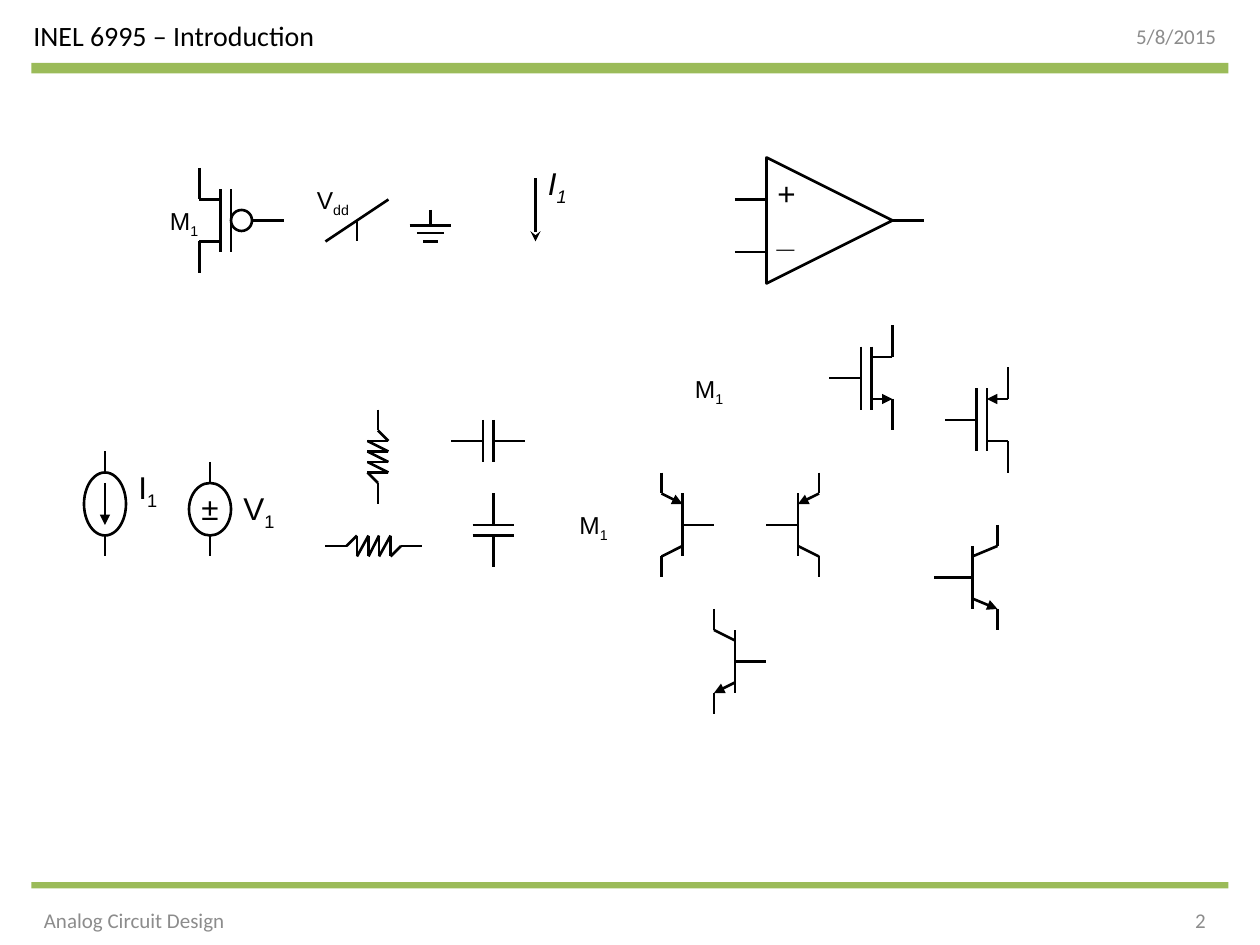
from dataclasses import dataclass, field
from itertools import pairwise
from typing import NamedTuple

from lxml.etree import SubElement
from pptx import Presentation
from pptx.dml.color import RGBColor
from pptx.enum.shapes import MSO_CONNECTOR, MSO_SHAPE
from pptx.enum.text import MSO_ANCHOR, MSO_AUTO_SIZE, PP_ALIGN
from pptx.oxml.ns import qn
from pptx.util import Emu, Pt

EMU_PER_PX = 7620  # 120 px to the inch, so the drawing grid is 10 px
COLORS = {"ink": "000000", "muted": "8C8C8C", "bar": "9BBB59"}


class Box(NamedTuple):
    left: int
    top: int
    width: int
    height: int


class Wire(NamedTuple):
    x1: int
    y1: int
    x2: int
    y2: int
    arrow: str = ""


class Label(NamedTuple):
    box: Box
    text: str
    subscript: str = ""
    size: int = 18
    italic: bool = False


class Caption(NamedTuple):
    box: Box
    text: str
    size: int
    color: str
    align: PP_ALIGN


@dataclass
class Symbol:
    wires: list[Wire]
    circles: list[Box] = field(default_factory=list)
    triangles: list[Box] = field(default_factory=list)
    labels: list[Label] = field(default_factory=list)


def px(*lengths: float) -> list[Emu]:
    return [Emu(round(length * EMU_PER_PX)) for length in lengths]


def rgb(name: str) -> RGBColor:
    return RGBColor.from_string(COLORS[name])


# Drawing
def draw_wire(shapes, wire: Wire) -> None:
    connector = shapes.add_connector(MSO_CONNECTOR.STRAIGHT, *px(*wire[:4]))
    connector.line.color.rgb = rgb("ink")
    connector.line.width = Pt(1.5)
    if wire.arrow:
        SubElement(connector.line._get_or_add_ln(), qn("a:tailEnd"), type=wire.arrow)
    SubElement(connector._element.spPr, qn("a:effectLst"))


def draw_outline(shapes, kind: MSO_SHAPE, box: Box, rotation: int = 0) -> None:
    shape = shapes.add_shape(kind, *px(*box))
    shape.shadow.inherit = False
    shape.fill.background()
    shape.line.color.rgb = rgb("ink")
    shape.line.width = Pt(1.5)
    shape.rotation = rotation


def draw_label(shapes, label: Label) -> None:
    frame = shapes.add_textbox(*px(*label.box)).text_frame
    frame.word_wrap = False
    frame.auto_size = MSO_AUTO_SIZE.SHAPE_TO_FIT_TEXT
    paragraph = frame.paragraphs[0]
    font = paragraph.font
    font.name, font.size, font.italic = "Arial", Pt(label.size), label.italic
    font.color.rgb = rgb("ink")
    paragraph.add_run().text = label.text
    if label.subscript:
        run = paragraph.add_run()
        run.text = label.subscript
        run._r.get_or_add_rPr().set("baseline", "-25000")


def draw_caption(shapes, caption: Caption) -> None:
    frame = shapes.add_textbox(*px(*caption.box)).text_frame
    frame.word_wrap = True
    frame.vertical_anchor = MSO_ANCHOR.MIDDLE
    paragraph = frame.paragraphs[0]
    paragraph.text = caption.text
    paragraph.alignment = caption.align
    paragraph.font.name, paragraph.font.size = "Calibri", Pt(caption.size)
    paragraph.font.color.rgb = rgb(caption.color)


def draw_bar(shapes, box: Box) -> None:
    bar = shapes.add_shape(MSO_SHAPE.RECTANGLE, *px(*box))
    bar.shadow.inherit = False
    bar.fill.solid()
    bar.fill.fore_color.rgb = rgb("bar")
    bar.line.fill.background()


def draw_symbol(shapes, symbol: Symbol) -> None:
    group = shapes.add_group_shape().shapes
    for box in symbol.circles:
        draw_outline(group, MSO_SHAPE.OVAL, box)
    for box in symbol.triangles:
        draw_outline(group, MSO_SHAPE.ISOSCELES_TRIANGLE, box, 90)
    for wire in symbol.wires:
        draw_wire(group, wire)
    for label in symbol.labels:
        draw_label(group, label)


# Circuit symbols
def place(wires: list[Wire], x: int, y: int, stretch: float = 1) -> list[Wire]:
    """Move wires to x, y; a negative stretch mirrors them left to right."""
    return [Wire(x + round(w.x1 * stretch), y + w.y1, x + round(w.x2 * stretch), y + w.y2, w.arrow)
            for w in wires]


def bipolar(x: int, y: int, pnp: bool, stretch: float = 1) -> Symbol:
    top = Wire(0, 20, 20, 30, "triangle" if pnp else "")
    bottom = Wire(0, 80, 20, 70) if pnp else Wire(20, 70, 0, 80, "triangle")
    return Symbol(place([Wire(0, 0, 0, 20), Wire(0, 80, 0, 100), top, bottom,
                         Wire(20, 20, 20, 80), Wire(20, 50, 50, 50)], x, y, stretch))


def mosfet(x: int, y: int, top_arrow: str = "", bottom_arrow: str = "",
           gate: tuple[int, int] = (30, 60), stretch: float = -1) -> Symbol:
    return Symbol(place([Wire(0, 0, 0, 30), Wire(0, 70, 0, 100),
                         Wire(0, 30, 20, 30, top_arrow), Wire(20, 70, 0, 70, bottom_arrow),
                         Wire(20, 20, 20, 80), Wire(30, 20, 30, 80),
                         Wire(gate[0], 50, gate[1], 50)], x, y, stretch))


def source(body: Box) -> Symbol:
    x, bottom = body.left + body.width // 2, body.top + body.height
    return Symbol([Wire(x, body.top - 20, x, body.top), Wire(x, bottom, x, bottom + 20)], [body])


def resistor(x: int, y: int, length: int, upright: bool) -> Symbol:
    pitch = (length - 40) / 5
    points = [(0, 0), (20, 0)]
    for turn in range(1, 5):
        points += [(20 + round(turn * pitch), side) for side in (10, -10)]
    points += [(length - 20, 0), (length, 0)]
    corners = [(x + across, y + along) if upright else (x + along, y - across)
               for along, across in points]
    return Symbol([Wire(*start, *end) for start, end in pairwise(corners)])


def capacitor(x: int, y: int, upright: bool) -> Symbol:
    parts = [(0, 0, 30, 0), (30, -20, 30, 20), (40, -20, 40, 20), (40, 0, 70, 0)]
    return Symbol([Wire(x + b, y + a, x + d, y + c) if upright else Wire(x + a, y + b, x + c, y + d)
                   for a, b, c, d in parts])


def build_symbols() -> list[Symbol]:
    ground = Symbol([Wire(410, 200, 410, 215)] + [
        Wire(410 - half, y, 410 + half, y) for half, y in ((20, 215), (13, 222), (7, 230))])
    supply = Symbol([Wire(340, 210, 340, 230), Wire(370, 190, 310, 230)],
                    labels=[Label(Box(290, 170, 58, 41), "V", "dd", 14)])
    branch_current = Symbol([Wire(510, 170, 510, 230, "stealth")],
                            labels=[Label(Box(510, 150, 43, 48), "I", "1", italic=True)])
    amplifier = Symbol([Wire(700, 190, 730, 190), Wire(700, 240, 730, 240), Wire(850, 210, 880, 210)],
                       triangles=[Box(730, 150, 120, 120)],
                       labels=[Label(Box(728, 160, 42, 48), "+", italic=True),
                               Label(Box(730, 200, 41, 48), "_", italic=True)])
    current_source = source(Box(80, 450, 40, 60))
    current_source.wires.append(Wire(100, 460, 100, 500, "triangle"))
    current_source.labels.append(Label(Box(120, 440, 43, 48), "I", "1"))
    voltage_source = source(Box(180, 460, 40, 50))
    voltage_source.labels += [Label(Box(220, 460, 55, 48), "V", "1"), Label(Box(180, 460, 40, 48), "±")]
    bubble_mosfet = mosfet(190, 160, gate=(50, 80), stretch=1)
    bubble_mosfet.circles.append(Box(220, 200, 20, 20))
    bubble_mosfet.labels.append(Label(Box(150, 190, 53, 41), "M", "1", 14))
    return [ground, supply, branch_current, amplifier, current_source, voltage_source, bubble_mosfet,
            capacitor(430, 420, False), capacitor(470, 470, True),
            resistor(360, 390, 90, True), resistor(310, 520, 92, False),
            mosfet(850, 310, bottom_arrow="triangle"), mosfet(960, 350, top_arrow="triangle"),
            bipolar(630, 450, True), bipolar(780, 450, True, -1),
            bipolar(680, 580, False), bipolar(950, 500, False, -1.2)]


def main() -> None:
    presentation = Presentation()
    presentation.slide_width, presentation.slide_height = px(1200, 900)
    shapes = presentation.slides.add_slide(presentation.slide_layouts[6]).shapes

    # Header and footer
    for bar in (Box(30, 60, 1140, 10), Box(30, 840, 1140, 6)):
        draw_bar(shapes, bar)
    for caption in (
        Caption(Box(20, 10, 400, 48), "INEL 6995 – Introduction", 16, "ink", PP_ALIGN.LEFT),
        Caption(Box(890, 10, 280, 48), "5/8/2015", 12, "muted", PP_ALIGN.RIGHT),
        Caption(Box(30, 852, 210, 48), "Analog Circuit Design", 12, "muted", PP_ALIGN.LEFT),
        Caption(Box(880, 852, 280, 48), "2", 12, "muted", PP_ALIGN.RIGHT),
    ):
        draw_caption(shapes, caption)

    # Symbols and the two free transistor names
    for symbol in build_symbols():
        draw_symbol(shapes, symbol)
    for left, top in ((650, 350), (540, 480)):
        draw_label(shapes, Label(Box(left, top, 53, 41), "M", "1", 14))

    presentation.save("out.pptx")


if __name__ == "__main__":
    main()
